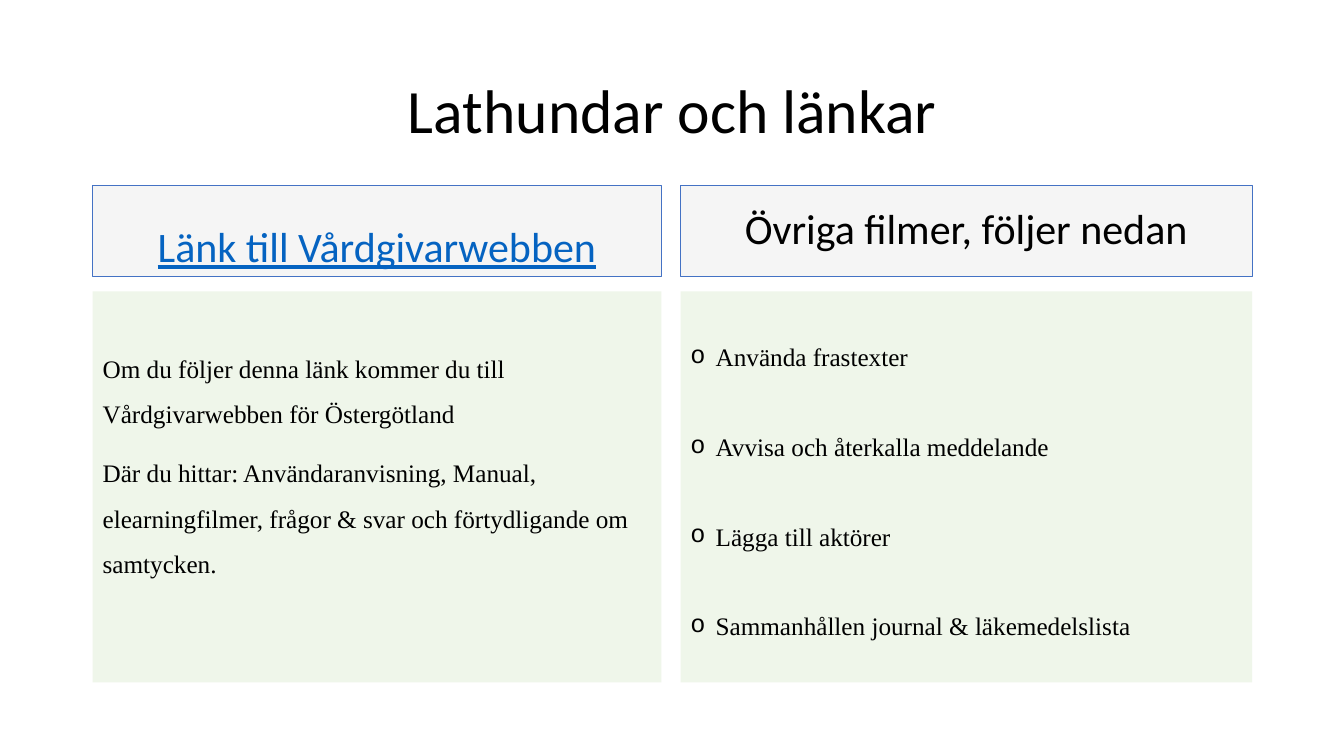
from lxml.etree import SubElement
from pptx import Presentation
from pptx.dml.color import RGBColor
from pptx.enum.shapes import MSO_SHAPE as Shape
from pptx.enum.text import MSO_ANCHOR as Anchor, PP_ALIGN as Align
from pptx.oxml.ns import qn
from pptx.util import Inches, Pt

COLORS = {"text": "000000", "link": "0563C1", "header": "F5F5F5",
          "border": "4472C4", "body": "EFF6EA"}
COLUMNS = [(0.92, 5.64), (6.75, 5.67)]
HEADER_ROW = (1.84, 0.9)
BODY_ROW = (2.89, 3.88)


def add_panel(column, row, fill, border=None):
    (left, width), (top, height) = column, row
    box = page.shapes.add_shape(Shape.RECTANGLE, Inches(left), Inches(top),
                                Inches(width), Inches(height))
    box.shadow.inherit = False
    box.fill.solid()
    box.fill.fore_color.rgb = RGBColor.from_string(COLORS[fill])
    if border:
        box.line.color.rgb = RGBColor.from_string(COLORS[border])
        box.line.width = Pt(0.75)
    else:
        box.line.fill.background()
    return box.text_frame


def write(frame, lines, size, font, spacing, align=Align.LEFT, color="text"):
    frame.word_wrap = True
    for index, line in enumerate(lines):
        para = frame.add_paragraph() if index else frame.paragraphs[0]
        para.text = line
        para.alignment = align
        para.line_spacing = spacing
        para.space_before = Pt(10 if index else 0)
        para.font.size = Pt(size)
        para.font.name = font
        para.font.color.rgb = RGBColor.from_string(COLORS[color])


deck = Presentation()
deck.slide_width, deck.slide_height = Inches(13.33), Inches(7.5)
page = deck.slides.add_slide(deck.slide_layouts[6])

title = page.shapes.add_textbox(Inches(0.92), Inches(0.4), Inches(11.5), Inches(1.45)).text_frame
title.vertical_anchor = Anchor.MIDDLE
write(title, ["Lathundar och länkar"], 44, "Calibri", 0.9, Align.CENTER)

headers = [
    ("Länk till Vårdgivarwebben", Anchor.BOTTOM, 2.0, "link"),
    ("Övriga filmer, följer nedan", Anchor.MIDDLE, 0.9, "text"),
]
for column, (heading, anchor, spacing, color) in zip(COLUMNS, headers):
    header = add_panel(column, HEADER_ROW, "header", "border")
    header.vertical_anchor = anchor
    write(header, [heading], 30, "Calibri", spacing, Align.CENTER, color)
    header.paragraphs[0].font.underline = color == "link"

bodies = [
    (["Om du följer denna länk kommer du till Vårdgivarwebben för Östergötland",
      "Där du hittar: Användaranvisning, Manual, elearningfilmer, frågor & svar "
      "och förtydligande om samtycken."], 1.5, 0.46, False),
    (["Använda frastexter", "Avvisa och återkalla meddelande", "Lägga till aktörer",
      "Sammanhållen journal & läkemedelslista"], 2.5, 0.05, True),
]
for column, (lines, spacing, inset, bulleted) in zip(COLUMNS, bodies):
    body = add_panel(column, BODY_ROW, "body")
    body.vertical_anchor = Anchor.TOP
    body.margin_top = Inches(inset)
    write(body, lines, 18, "Times New Roman", spacing)
    if bulleted:
        for para in body.paragraphs:
            props = para._p.get_or_add_pPr()
            props.set("marL", str(Inches(0.25)))
            props.set("indent", str(-Inches(0.25)))
            bullet_font = SubElement(props, qn("a:buFont"), typeface="Courier New")
            bullet = SubElement(props, qn("a:buChar"), char="o")
            defaults = props.find(qn("a:defRPr"))
            defaults.addprevious(bullet_font)
            defaults.addprevious(bullet)

deck.save("out.pptx")
